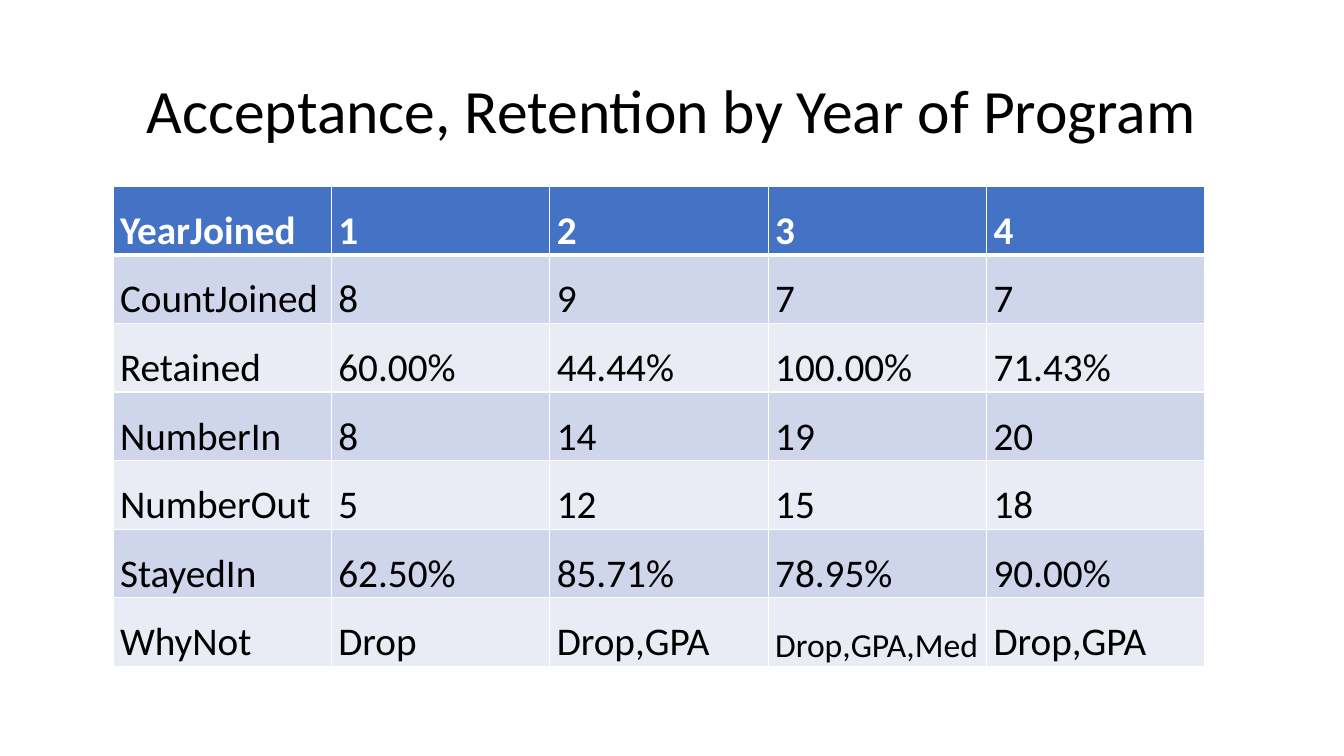
from lxml import etree
from pptx import Presentation
from pptx import util as u
from pptx.dml.color import RGBColor
from pptx.enum import text
from pptx.oxml import ns

BLACK = RGBColor(0x00, 0x00, 0x00)
WHITE = RGBColor(0xFF, 0xFF, 0xFF)
HEADER_BLUE = RGBColor(0x44, 0x72, 0xC4)
BANDS = (RGBColor(0xE9, 0xEB, 0xF5), RGBColor(0xCF, 0xD5, 0xEA))

TITLE = "Acceptance, Retention by Year of Program"
YEARS = [
    ["YearJoined", "1", "2", "3", "4"],
    ["CountJoined", "8", "9", "7", "7"],
    ["Retained", "60.00%", "44.44%", "100.00%", "71.43%"],
    ["NumberIn", "8", "14", "19", "20"],
    ["NumberOut", "5", "12", "15", "18"],
    ["StayedIn", "62.50%", "85.71%", "78.95%", "90.00%"],
    ["WhyNot", "Drop", "Drop,GPA", "Drop,GPA,Med", "Drop,GPA"],
]
SMALL_ENTRY = "Drop,GPA,Med"


def write(frame, words, *, font, size, color=BLACK, bold=False,
          align=text.PP_ALIGN.LEFT, spacing=None, tab=None):
    para = frame.paragraphs[0]
    para.alignment = align
    if spacing:
        para.line_spacing = spacing
    if tab:
        stops = etree.SubElement(para._p.get_or_add_pPr(), ns.qn("a:tabLst"))
        etree.SubElement(stops, ns.qn("a:tab"), pos=str(u.Pt(tab)), algn="l")
    span = para.add_run()
    span.text = words
    span.font.name = font
    span.font.size = u.Pt(size)
    span.font.bold = bold
    span.font.color.rgb = color


def draw_border(cell, side, width):
    line = etree.SubElement(cell._tc.get_or_add_tcPr(), ns.qn("a:ln" + side),
                            w=str(u.Pt(width)))
    fill = etree.SubElement(line, ns.qn("a:solidFill"))
    etree.SubElement(fill, ns.qn("a:srgbClr"), val=str(WHITE))


class SlideBuilder:
    font = "Calibri"
    title_size = 44
    cell_size = 28
    small_size = 24

    def __init__(self, page):
        self.page = page

    def title(self, words, left, top, width, height):
        box = self.page.shapes.add_textbox(*map(u.Pt, (left, top, width, height)))
        frame = box.text_frame
        frame.word_wrap = True
        frame.vertical_anchor = text.MSO_ANCHOR.MIDDLE
        write(frame, words, font=self.font, size=self.title_size,
              align=text.PP_ALIGN.CENTER, spacing=0.9)

    def table(self, rows, left, top, column_width, row_height):
        columns = len(rows[0])
        frame = self.page.shapes.add_table(
            len(rows), columns, u.Pt(left), u.Pt(top),
            u.Pt(column_width * columns), u.Pt(row_height * len(rows)))
        table = frame.table
        table.horz_banding = False
        for column in table.columns:
            column.width = u.Pt(column_width)
        for r, row in enumerate(rows):
            table.rows[r].height = u.Pt(row_height)
            for c, words in enumerate(row):
                self.cell(table.cell(r, c), words, r)

    def cell(self, cell, words, row):
        header = row == 0
        cell.margin_left = cell.margin_right = u.Pt(5)
        cell.margin_top = cell.margin_bottom = 0
        cell.vertical_anchor = text.MSO_ANCHOR.BOTTOM
        # The rule below the header is heavier and shared by both rows.
        widths = {"L": 1, "R": 1, "T": 3 if row == 1 else 1, "B": 3 if header else 1}
        for side, width in widths.items():
            draw_border(cell, side, width)
        cell.fill.solid()
        cell.fill.fore_color.rgb = HEADER_BLUE if header else BANDS[row % 2]
        write(cell.text_frame, words, font=self.font,
              size=self.small_size if words == SMALL_ENTRY else self.cell_size,
              color=WHITE if header else BLACK, bold=header,
              align=text.PP_ALIGN.JUSTIFY, tab=18)


def main():
    deck = Presentation()
    deck.slide_width, deck.slide_height = u.Pt(960), u.Pt(540)
    page = deck.slides.add_slide(deck.slide_layouts[6])
    builder = SlideBuilder(page)
    builder.title(TITLE, 66, 28.75, 828, 104.4)
    builder.table(YEARS, 80.75, 133.2, 156, 48.96)
    deck.save("out.pptx")


if __name__ == "__main__":
    main()
